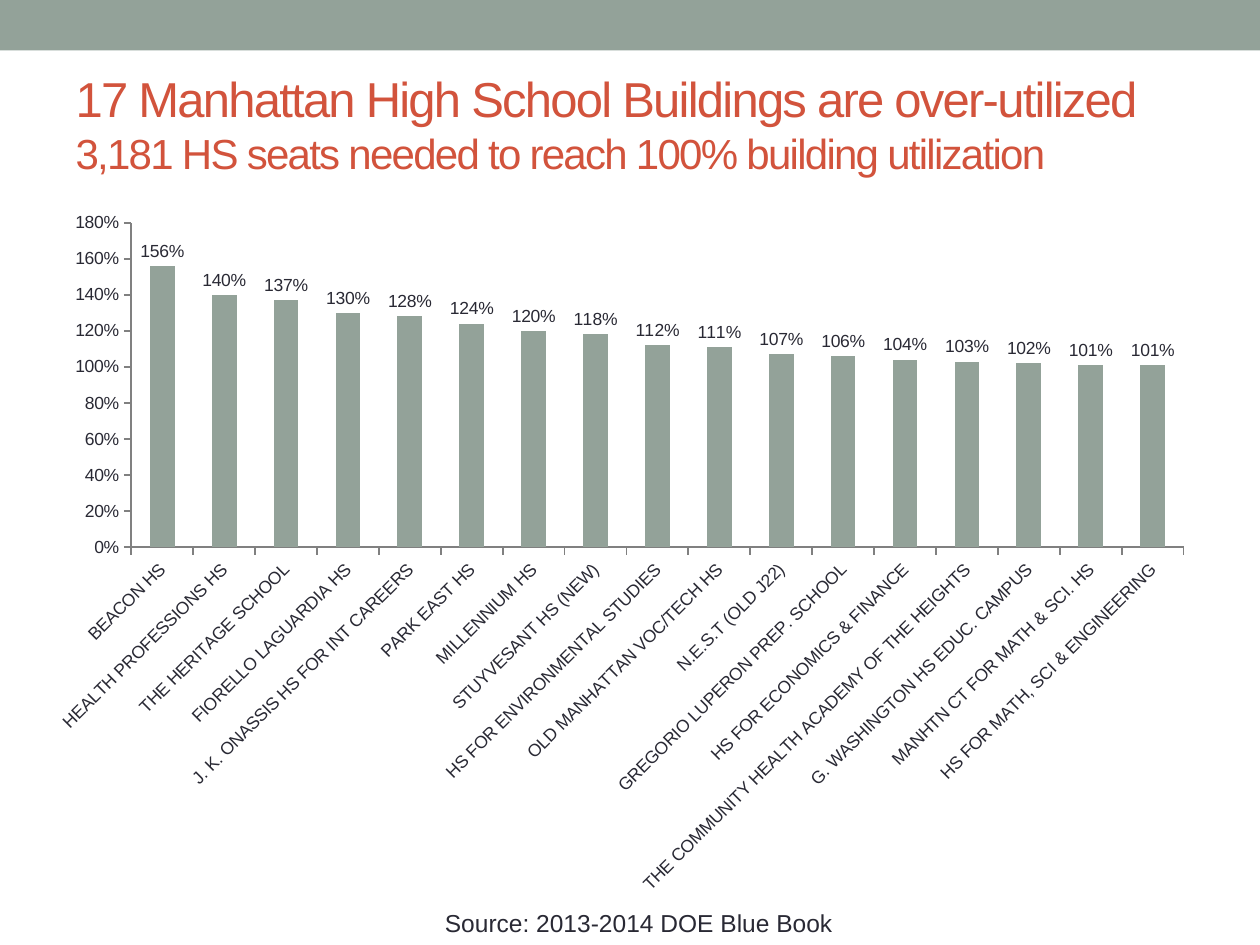
from pptx import Presentation, util as u
from pptx.chart.data import CategoryChartData
from pptx.dml.color import RGBColor
from pptx.enum import chart as ch, shapes, text
from pptx.oxml import parse_xml
from pptx.oxml.ns import nsdecls, qn

PX = 9144  # 100 px to the inch
SAGE = RGBColor(0x93, 0xA2, 0x99)
RUST = RGBColor(0xD2, 0x53, 0x3C)
INK = RGBColor(0x29, 0x29, 0x34)
GRAY = RGBColor(0x80, 0x80, 0x80)
FONT = "Arial"
PCT = '0"%"'


def box(*px):
    return [u.Emu(n * PX) for n in px]


def write(para, words, size, color, space=0, align=text.PP_ALIGN.LEFT):
    para.alignment = align
    run = para.add_run()
    run.text = words
    run.font.size = u.Pt(size)
    run.font.name = FONT
    run.font.color.rgb = color
    if space:
        run.font._element.set("spc", str(space * 100))


prs = Presentation()
prs.slide_width, prs.slide_height = box(1000, 750)
slide = prs.slides.add_slide(prs.slide_layouts[5])

# Top band
band = slide.shapes.add_shape(shapes.MSO_SHAPE.RECTANGLE, *box(0, 0, 1000, 40))
band.shadow.inherit = False
band.fill.solid()
band.fill.fore_color.rgb = SAGE
band.line.fill.background()

# Title in two sizes
title = slide.shapes.title
title.left, title.top, title.width, title.height = box(50, 44, 900, 108)
frame = title.text_frame
frame.auto_size = text.MSO_AUTO_SIZE.NONE
frame.vertical_anchor = text.MSO_ANCHOR.MIDDLE
para = frame.paragraphs[0]
write(para, "17 Manhattan High School Buildings are over-utilized", 28, RUST, -1)
para.add_line_break()
write(para, "3,181 HS seats needed to reach 100% building utilization", 24, RUST, -1)

# Source line
note = slide.shapes.add_textbox(*box(33, 716, 948, 34)).text_frame
note.word_wrap = True
write(note.paragraphs[0], "Source: 2013-2014 DOE Blue Book", 14, INK,
      align=text.PP_ALIGN.CENTER)

# Utilization by school
rates = {
    "BEACON HS": 156,
    "HEALTH PROFESSIONS HS": 140,
    "THE HERITAGE SCHOOL": 137,
    "FIORELLO LAGUARDIA HS": 130,
    "J. K. ONASSIS HS FOR INT CAREERS": 128,
    "PARK EAST HS": 124,
    "MILLENNIUM HS": 120,
    "STUYVESANT HS (NEW)": 118,
    "HS FOR ENVIRONMENTAL STUDIES": 112,
    "OLD MANHATTAN VOC/TECH HS": 111,
    "N.E.S.T (OLD J22)": 107,
    "GREGORIO LUPERON PREP. SCHOOL": 106,
    "HS FOR ECONOMICS & FINANCE": 104,
    "THE COMMUNITY HEALTH ACADEMY OF THE HEIGHTS": 103,
    "G. WASHINGTON HS EDUC. CAMPUS": 102,
    "MANHTN CT FOR MATH & SCI. HS": 101,
    "HS FOR MATH, SCI & ENGINEERING": 101,
}
data = CategoryChartData(number_format=PCT)
data.categories = list(rates)
data.add_series("Series 1", list(rates.values()))
chart = slide.shapes.add_chart(
    ch.XL_CHART_TYPE.COLUMN_CLUSTERED, *box(30, 160, 928, 560), data).chart
chart.has_legend = False
chart.has_title = False
chart.font.size = u.Pt(10)
chart.font.name = FONT
chart.font.color.rgb = INK

# Columns and their labels
plot = chart.plots[0]
plot.gap_width = 150
plot.vary_by_categories = False
fill = plot.series[0].format.fill
fill.solid()
fill.fore_color.rgb = SAGE
plot.has_data_labels = True
tags = plot.data_labels
tags.show_value = True
tags.number_format = PCT
tags.number_format_is_linked = False
tags.position = ch.XL_LABEL_POSITION.OUTSIDE_END

# Axes
cat, val = chart.category_axis, chart.value_axis
for axis in (cat, val):
    axis.has_major_gridlines = False
    axis.major_tick_mark = ch.XL_TICK_MARK.OUTSIDE
    axis.minor_tick_mark = ch.XL_TICK_MARK.NONE
    axis.format.line.color.rgb = GRAY
    axis.format.line.width = u.Pt(1)
    axis.tick_labels.font.size = u.Pt(10)
val.minimum_scale, val.maximum_scale, val.major_unit = 0, 180, 20
val.tick_labels.number_format = PCT
val.tick_labels.number_format_is_linked = False

# Slanted school names
slant = cat._element.find(qn("c:txPr")).find(qn("a:bodyPr"))
slant.set("rot", str(-45 * 60000))
slant.set("vert", "horz")

# Fixed plot area, as shares of the chart
area = chart._chartSpace.chart.plotArea
for old in area.findall(qn("c:layout")):
    area.remove(old)
spots = "".join(f'<c:{tag} val="{num}"/>' for tag, num in (
    ("layoutTarget", "inner"), ("xMode", "edge"), ("yMode", "edge"),
    ("x", 0.08), ("y", 0.03), ("w", 0.9), ("h", 0.46)))
area.insert(0, parse_xml(
    f'<c:layout {nsdecls("c")}><c:manualLayout>{spots}</c:manualLayout></c:layout>'))

prs.save("out.pptx")
